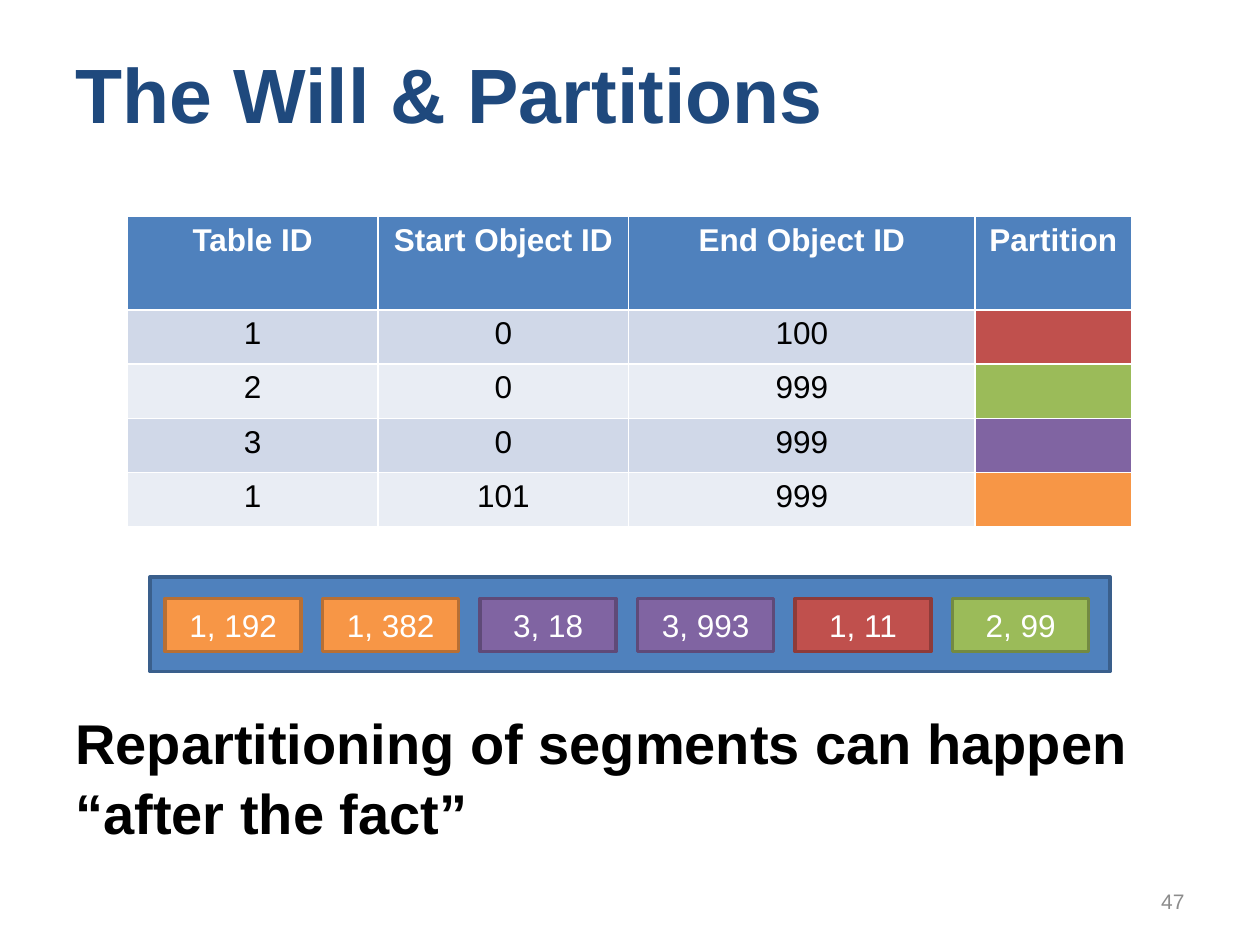
from pptx import Presentation
from pptx.dml.color import RGBColor
from pptx.enum.shapes import MSO_SHAPE
from pptx.enum.text import MSO_ANCHOR, PP_ALIGN
from pptx.util import Inches, Pt

RECT = MSO_SHAPE.RECTANGLE
LEFT, CENTER, RIGHT = PP_ALIGN.LEFT, PP_ALIGN.CENTER, PP_ALIGN.RIGHT
TOP, MIDDLE = MSO_ANCHOR.TOP, MSO_ANCHOR.MIDDLE

COLORS = {
    "title": "1F497D", "black": "000000", "white": "FFFFFF", "gray": "8C8C8C",
    "blue": "4F81BD", "blue_line": "3A5F8C",
    "orange": "F79646", "orange_line": "B76F34",
    "purple": "8064A2", "purple_line": "5F4A78",
    "red": "C0504D", "red_line": "8E3B39",
    "green": "9BBB59", "green_line": "738A42",
    "band_dark": "D0D8E8", "band_light": "E9EDF4",
}
HEADERS = ["Table ID", "Start Object ID", "End Object ID", "Partition"]
ROWS = [
    ("1", "0", "100", "red"),
    ("2", "0", "999", "green"),
    ("3", "0", "999", "purple"),
    ("1", "101", "999", "orange"),
]
COL_WIDTHS = [1.99, 1.99, 2.75, 1.24]
ROW_HEIGHTS = [0.74] + [0.43] * len(ROWS)
SEGMENTS = [
    ("1, 192", "orange"), ("1, 382", "orange"), ("3, 18", "purple"),
    ("3, 993", "purple"), ("1, 11", "red"), ("2, 99", "green"),
]


def rgb(name):
    return RGBColor.from_string(COLORS[name])


def write(tf, text, size, color, bold=False, align=LEFT):
    p = tf.paragraphs[0]
    p.text = text
    p.alignment = align
    p.font.name = "Arial"
    p.font.size = Pt(size)
    p.font.bold = bold
    p.font.color.rgb = rgb(color)
    return p


def add_text(s, box, text, size, color, bold=False, align=LEFT, anchor=MIDDLE):
    tf = s.shapes.add_textbox(*map(Inches, box)).text_frame
    tf.word_wrap = True
    tf.vertical_anchor = anchor
    return write(tf, text, size, color, bold, align)


def add_box(shapes, box, color):
    sp = shapes.add_shape(RECT, *map(Inches, box))
    sp.shadow.inherit = False
    sp.fill.solid()
    sp.fill.fore_color.rgb = rgb(color)
    sp.line.color.rgb = rgb(color + "_line")
    sp.line.width = Pt(2)
    return sp


def fill_cell(cell, color):
    cell.fill.solid()
    cell.fill.fore_color.rgb = rgb(color)


def add_partition_table(s):
    table = s.shapes.add_table(
        len(ROW_HEIGHTS), len(COL_WIDTHS), Inches(1.01), Inches(1.72),
        Inches(sum(COL_WIDTHS)), Inches(sum(ROW_HEIGHTS))).table
    for col, width in zip(table.columns, COL_WIDTHS):
        col.width = Inches(width)
    for row, height in zip(table.rows, ROW_HEIGHTS):
        row.height = Inches(height)
    for c, header in enumerate(HEADERS):
        cell = table.cell(0, c)
        fill_cell(cell, "blue")
        write(cell.text_frame, header, 18, "white", True, CENTER)
    for r, (*values, partition) in enumerate(ROWS, start=1):
        band = "band_dark" if r % 2 else "band_light"
        for c, value in enumerate(values):
            cell = table.cell(r, c)
            fill_cell(cell, band)
            write(cell.text_frame, value, 18, "black", False, CENTER)
        fill_cell(table.cell(r, len(values)), partition)


def add_segments(s):
    group = s.shapes.add_group_shape()
    add_box(group.shapes, (1.19, 4.58, 7.62, 0.75), "blue")
    for i, (label, color) in enumerate(SEGMENTS):
        sp = add_box(group.shapes, (1.31 + 1.25 * i, 4.75, 1.08, 0.42), color)
        tf = sp.text_frame
        tf.vertical_anchor = MIDDLE
        write(tf, label, 18, "white", False, CENTER)


def main():
    prs = Presentation()
    prs.slide_width, prs.slide_height = Inches(10), Inches(7.5)
    s = prs.slides.add_slide(prs.slide_layouts[6])
    add_text(s, (0.5, 0.3, 9, 0.87), "The Will & Partitions", 44, "title", True)
    add_text(s, (7.17, 6.95, 2.33, 0.4), "47", 12, "gray", align=RIGHT)
    add_segments(s)
    add_partition_table(s)
    p = add_text(s, (0.5, 5.55, 9, 1.45),
                 "Repartitioning of segments can happen “after the fact”",
                 32, "black", True, anchor=TOP)
    p.space_before = Pt(2)
    p.line_spacing = 1.04
    prs.save("out.pptx")


if __name__ == "__main__":
    main()
